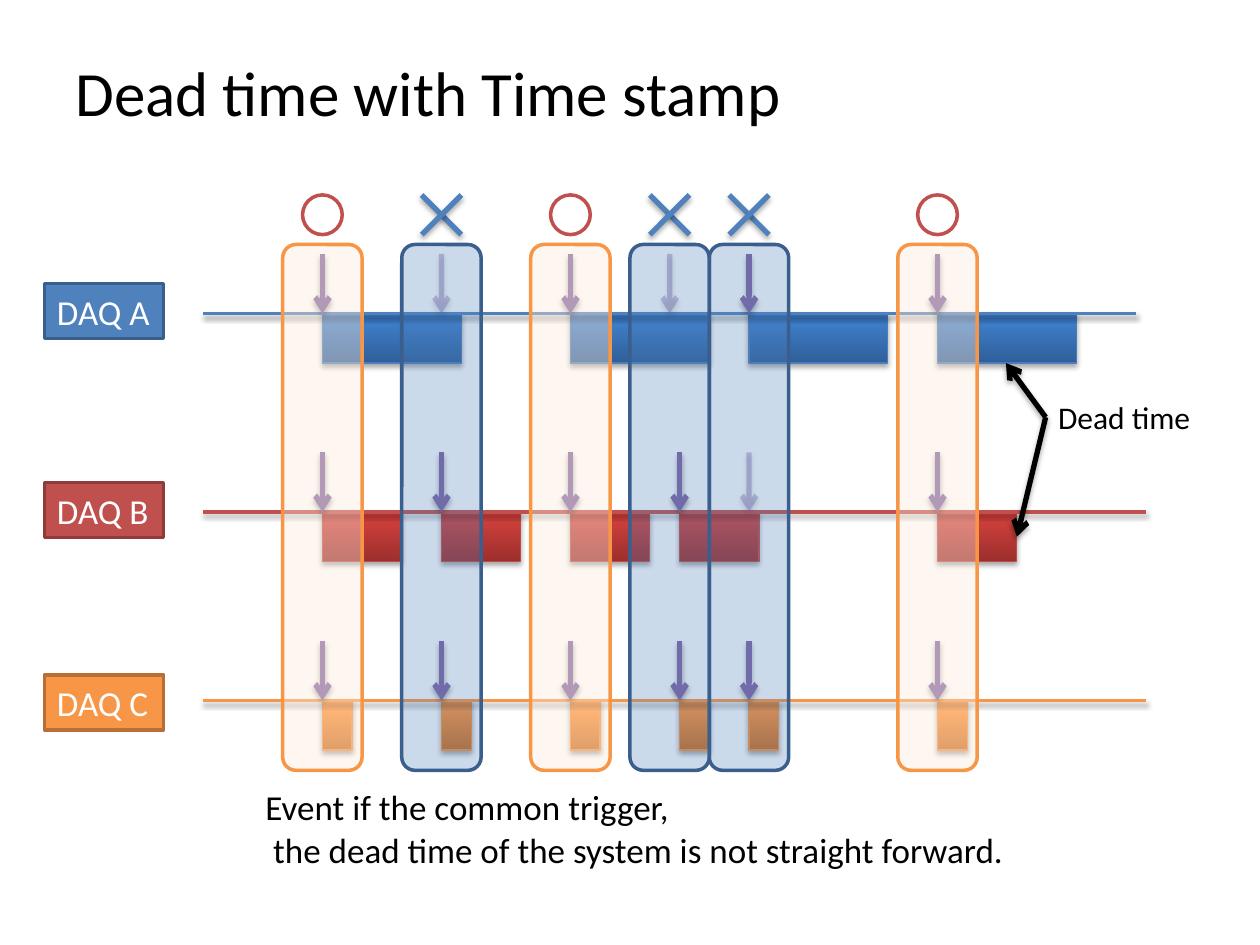
from dataclasses import dataclass

from lxml.etree import SubElement
from pptx import Presentation
from pptx.dml.color import RGBColor
from pptx.enum.shapes import MSO_CONNECTOR, MSO_SHAPE
from pptx.enum.text import MSO_ANCHOR, PP_ALIGN
from pptx.oxml.ns import qn
from pptx.util import Cm, Pt


@dataclass(frozen=True)
class Theme:
    font: str = "Calibri"
    title_size: int = 36
    body_size: int = 20
    note_size: int = 18
    text: str = "000000"
    white: str = "FFFFFF"
    trigger: str = "8064A2"
    accepted: str = "F79646"
    accepted_fill: str = "FDEADA"
    circle: str = "C0504D"
    rejected: str = "4F81BD"
    rejected_edge: str = "3A5F8C"


@dataclass(frozen=True)
class Box:
    left: float
    top: float
    width: float
    height: float


@dataclass(frozen=True)
class Lane:
    name: str
    axis: float  # height of the time line
    label_top: float
    end: float
    color: str
    label_edge: str
    block_edge: str
    gradient: tuple
    dead_time: float
    recorded: tuple
    missed: tuple = ()


THEME = Theme()
LANES = (
    Lane("DAQ A", 6.32, 5.72, 22.9, "4F81BD", "3A5F8C", "4B7EBC",
         ("2F5F99", "3D7CC7", "3A7CCB"), 2.8,
         (6.5, 11.5, 15.1, 18.9), (8.9, 13.5)),
    Lane("DAQ B", 10.32, 9.73, 23.1, "C0504D", "8E3B39", "BF4C48",
         ("9C2F2D", "CB3E3A", "CE3B37"), 1.6,
         (6.5, 8.9, 11.5, 13.7, 18.9), (15.1,)),
    Lane("DAQ C", 14.12, 13.61, 23.1, "F79646", "B76F34", "F69240",
         ("CC6E20", "FF9034", "FF9136"), 0.6,
         (6.5, 8.9, 11.5, 13.7, 15.1, 18.9)),
)
# Centre of each event window, and whether all systems recorded it
EVENTS = ((6.5, True), (11.5, True), (18.9, True),
          (8.9, False), (13.5, False), (15.1, False))
LINE_START = 4.1
BLOCK_HEIGHT = 1
ARROW_LENGTH = 1.2


def rgb(color):
    return RGBColor.from_string(color)


def set_opacity(fill_parent, percent):
    color = fill_parent.find(qn("a:solidFill"))[0]
    SubElement(color, qn("a:alpha"), val=str(percent * 1000))


def add_shadow(effects, opacity=35, distance=1.8):
    shadow = SubElement(effects, qn("a:outerShdw"), blurRad=str(Pt(3.1)),
                        dist=str(Pt(distance)), dir="5400000", rotWithShape="0")
    color = SubElement(shadow, qn("a:srgbClr"), val="000000")
    SubElement(color, qn("a:alpha"), val=str(opacity * 1000))


def add_line(shapes, start, end, color, width, arrow=False, opacity=100, shadow=(35, 1.8)):
    line = shapes.add_connector(MSO_CONNECTOR.STRAIGHT, *map(Cm, (*start, *end)))
    line.line.color.rgb = rgb(color)
    line.line.width = Pt(width)
    outline = line.line._get_or_add_ln()
    if opacity < 100:
        set_opacity(outline, opacity)
    if arrow:
        SubElement(outline, qn("a:tailEnd"), type="arrow")
    add_shadow(SubElement(line._element.spPr, qn("a:effectLst")), *shadow)


def add_box(shapes, kind, box, fill, edge, width=2, opacity=100):
    shape = shapes.add_shape(kind, Cm(box.left), Cm(box.top), Cm(box.width), Cm(box.height))
    shape.shadow.inherit = False
    shape.fill.solid()
    shape.fill.fore_color.rgb = rgb(fill)
    if opacity < 100:
        set_opacity(shape._element.spPr, opacity)
    shape.line.color.rgb = rgb(edge)
    shape.line.width = Pt(width)
    return shape


def write(shape, text, size, color, wrap=False, anchor=MSO_ANCHOR.TOP):
    frame = shape.text_frame
    frame.text = text
    frame.word_wrap = wrap
    frame.vertical_anchor = anchor
    for paragraph in frame.paragraphs:
        paragraph.alignment = PP_ALIGN.LEFT
        for run in paragraph.runs:
            run.font.name = THEME.font
            run.font.size = Pt(size)
            run.font.color.rgb = rgb(color)


def add_text(slide, box, text, size, **layout):
    shape = slide.shapes.add_textbox(Cm(box.left), Cm(box.top), Cm(box.width), Cm(box.height))
    write(shape, text, size, THEME.text, **layout)


def add_dead_block(slide, box, lane):
    block = add_box(slide.shapes, MSO_SHAPE.RECTANGLE, box, lane.color, lane.block_edge, 0.75)
    block.fill.gradient()
    block.fill.gradient_angle = 90
    properties = block._element.spPr
    stops = properties.find(qn("a:gradFill")).find(qn("a:gsLst"))
    for stop in list(stops):
        stops.remove(stop)
    for position, color in zip((0, 80, 100), lane.gradient):
        stop = SubElement(stops, qn("a:gs"), pos=str(position * 1000))
        SubElement(stop, qn("a:srgbClr"), val=color)
    add_shadow(properties.find(qn("a:effectLst")))


def add_lane(slide, box, lane):
    """Time line along the box top, dead times below it and triggers above."""
    for time in lane.recorded:
        add_dead_block(slide, Box(time, box.top, lane.dead_time, box.height), lane)
    add_line(slide.shapes, (box.left, box.top), (box.left + box.width, box.top),
             lane.color, 2, shadow=(38, 1.6))
    for time in lane.recorded + lane.missed:
        add_line(slide.shapes, (time, box.top - ARROW_LENGTH), (time, box.top),
                 THEME.trigger, 3, arrow=True, opacity=40 if time in lane.missed else 100)


def add_label(slide, box, lane):
    label = add_box(slide.shapes, MSO_SHAPE.RECTANGLE, box, lane.color, lane.label_edge)
    write(label, lane.name, THEME.body_size, THEME.white, anchor=MSO_ANCHOR.MIDDLE)


def add_dead_time_note(slide, box):
    add_text(slide, box, "Dead time", THEME.note_size)
    start = (box.left, box.top + box.height / 2)
    for across, down in ((-0.8, -1.09), (-0.58, 2.41)):
        add_line(slide.shapes, start, (start[0] + across, start[1] + down),
                 THEME.text, 3, arrow=True)


def add_event(slide, box, accepted):
    """Verdict mark at the top of the box, event window below it."""
    shapes = slide.shapes.add_group_shape().shapes
    size = box.width / 2
    left, right = box.left + size / 2, box.left + size * 1.5
    top, bottom = box.top, box.top + size
    if accepted:
        add_box(shapes, MSO_SHAPE.OVAL, Box(left, top, size, size), THEME.white, THEME.circle)
        colors = THEME.accepted_fill, THEME.accepted
    else:
        add_line(shapes, (left, top), (right, bottom), THEME.rejected, 3)
        add_line(shapes, (left, bottom), (right, top), THEME.rejected, 3)
        colors = THEME.rejected, THEME.rejected_edge
    offset = size + 0.2
    window = Box(box.left, top + offset, box.width, box.height - offset)
    add_box(shapes, MSO_SHAPE.ROUNDED_RECTANGLE, window, *colors,
            opacity=40 if accepted else 29)


def main():
    presentation = Presentation()
    presentation.slide_width, presentation.slide_height = Cm(25.4), Cm(19.05)
    slide = presentation.slides.add_slide(presentation.slide_layouts[6])

    # Title
    add_text(slide, Box(1.27, 0.76, 22.86, 2.16), "Dead time with Time stamp",
             THEME.title_size, wrap=True, anchor=MSO_ANCHOR.MIDDLE)

    # Time lines and their labels
    for lane in LANES:
        add_lane(slide, Box(LINE_START, lane.axis, lane.end - LINE_START, BLOCK_HEIGHT), lane)
        add_label(slide, Box(0.9, lane.label_top, 2.4, 1.11), lane)

    # Remarks
    add_text(slide, Box(5.1, 15.72, 15.55, 1.96),
             "Event if the common trigger,\n"
             " the dead time of the system is not straight forward.", THEME.body_size)
    add_dead_time_note(slide, Box(21.08, 7.9, 3.23, 1.02))

    # Event windows
    for center, accepted in EVENTS:
        add_event(slide, Box(center - 0.8, 3.93, 1.6, 11.6), accepted)

    presentation.save("out.pptx")


if __name__ == "__main__":
    main()
